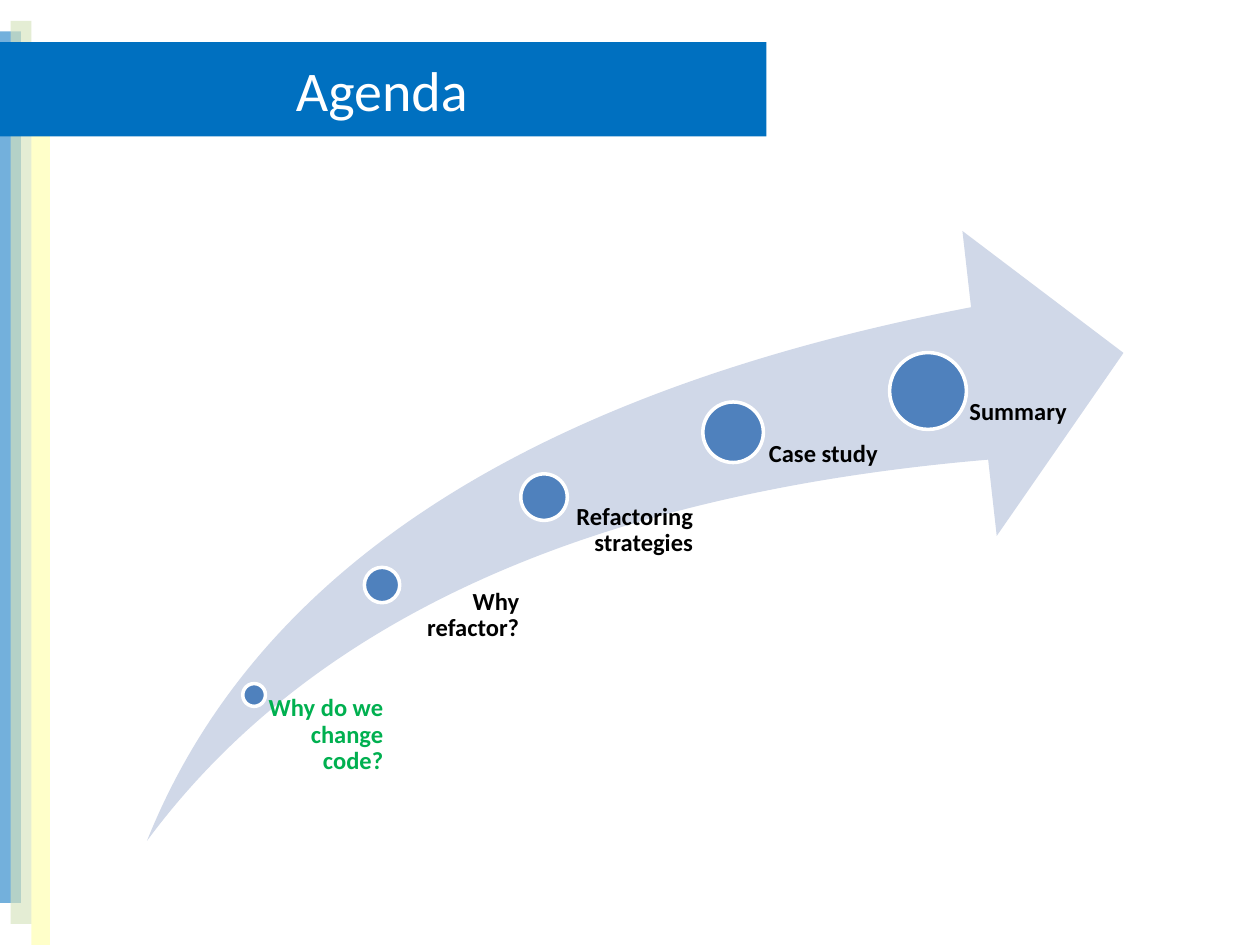
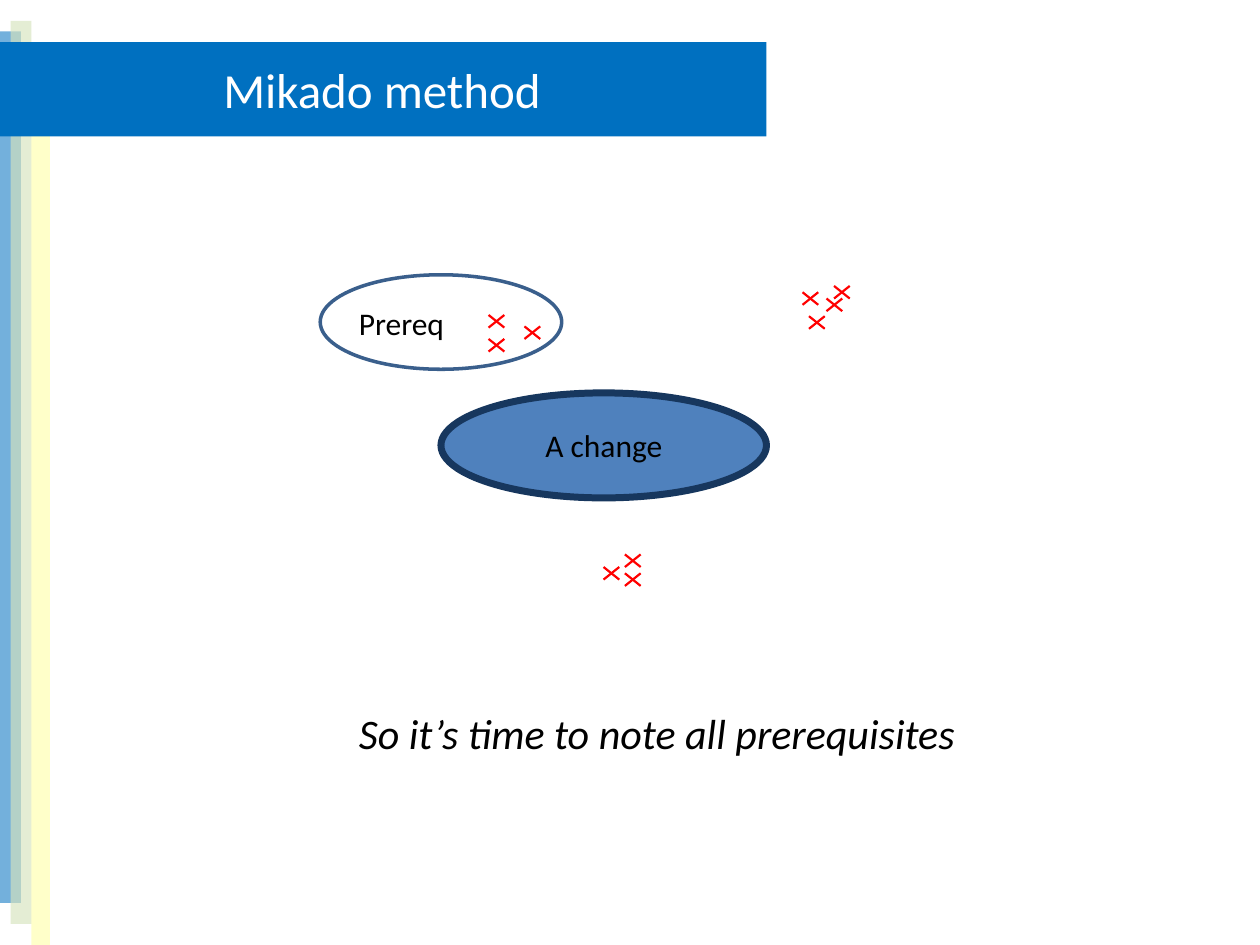
from dataclasses import dataclass

from lxml.etree import SubElement
from pptx import Presentation
from pptx.dml.color import RGBColor as Rgb
from pptx.enum.shapes import MSO_CONNECTOR as Connector, MSO_SHAPE as Shape
from pptx.enum.text import MSO_ANCHOR as Anchor, MSO_AUTO_SIZE as Fit, PP_ALIGN as Align
from pptx.oxml.ns import qn
from pptx.util import Pt


@dataclass(frozen=True)
class Theme:
    font: str = "Calibri"
    white: str = "FFFFFF"
    black: str = "000000"
    banner: str = "0070C0"
    sage: str = "D7E4BD"
    yellow: str = "FFFF00"
    swoosh: str = "D0D8E8"
    accent: str = "4F81BD"
    outline: str = "3A5F8C"
    navy: str = "17375E"
    current: str = "00B050"
    cross: str = "FF0000"
    title_size: float = 32
    small_title_size: float = 28
    remark_size: float = 24
    node_size: float = 18
    label_size: float = 14


THEME = Theme()

# left, top, width, height, colour, opacity in percent
BANDS = [
    (0, 18, 12, 498, THEME.banner, 55),
    (6, 12, 12, 516, THEME.sage, 65),
    (18, 24, 10.5, 516, THEME.yellow, 21),
]
BANNER = (-1.5, 24, 439.5, 54)

# dot centre x, centre y, diameter; label box; label; colour
MILESTONES = [
    (145.2, 397.1, 13, (145.5, 397.5, 73.5, 83), "Why do we change code?", THEME.current),
    (218.3, 334.3, 20.2, (204, 336.5, 92.7, 146), "Why\vrefactor?", THEME.black),
    (310.9, 284.1, 26.6, (288, 288, 108, 196), "Refactoring strategies", THEME.black),
    (418.9, 247, 34.6, (390, 252, 111.6, 234), "Case study", THEME.black),
    (530.3, 223.4, 43.9, (498, 228, 111.6, 256), "Summary", THEME.black),
]
LABEL_INSET_PER_DIAMETER = 0.53

CROSS_WIDTH, CROSS_HEIGHT = 9, 7.2
CROSSES = [
    (279.2, 180), (299.7, 186.5), (279.2, 193.7),
    (458.6, 167), (476.6, 163.4), (472.3, 170.6), (462.3, 180.7),
    (344.9, 324), (357.1, 327.6), (357.1, 316.8),
]


def points(*lengths):
    return [Pt(length) for length in lengths]


def apply_format(target, values):
    for name, value in values.items():
        setattr(target, name, value)


def write(shape, text, size, color, align=Align.LEFT, frame_format=None, **font_format):
    frame = shape.text_frame
    apply_format(frame, {"word_wrap": True, **(frame_format or {})})
    frame.text = text
    para = frame.paragraphs[0]
    para.alignment = align
    for span in para.runs:
        apply_format(span.font, {"name": THEME.font, "size": Pt(size), **font_format})
        span.font.color.rgb = Rgb.from_string(color)
    return para


def add_filled(page, kind, bounds, fill, line=None, line_width=2):
    shape = page.shapes.add_shape(kind, *points(*bounds))
    shape.shadow.inherit = False
    shape.fill.solid()
    shape.fill.fore_color.rgb = Rgb.from_string(fill)
    if line:
        shape.line.color.rgb = Rgb.from_string(line)
        shape.line.width = Pt(line_width)
    else:
        shape.line.fill.background()
    return shape


def add_text(page, bounds, text, size, color=THEME.black, **options):
    box = page.shapes.add_textbox(*points(*bounds))
    return write(box, text, size, color, **options)


def move_bands_to_layout(page):
    """Draw the side bands on the page, then move them behind its layout."""
    tree = page.slide_layout.shapes.element
    for index, (*bounds, color, opacity) in enumerate(BANDS):
        band = add_filled(page, Shape.RECTANGLE, bounds, color).element
        fill_color = band.spPr.find(f"{qn('a:solidFill')}/{qn('a:srgbClr')}")
        SubElement(fill_color, qn("a:alpha"), val=str(opacity * 1000))
        band.nvSpPr.cNvPr.set("id", str(100 + index))
        tree.insert(2 + index, band)


def add_page(deck, layout, title, size):
    page = deck.slides.add_slide(layout)
    banner = page.shapes.title
    names = ("left", "top", "width", "height")
    apply_format(banner, dict(zip(names, points(*BANNER))))
    banner.fill.solid()
    banner.fill.fore_color.rgb = Rgb.from_string(THEME.banner)
    write(banner, title, size, THEME.white, align=Align.CENTER,
          frame_format={"vertical_anchor": Anchor.MIDDLE, "auto_size": Fit.NONE})
    return page


def add_milestone(page, x, y, diameter, bounds, label, color):
    corner = (x - diameter / 2, y - diameter / 2)
    add_filled(page, Shape.OVAL, (*corner, diameter, diameter), THEME.accent, THEME.white)
    insets = {
        "margin_left": Pt(diameter * LABEL_INSET_PER_DIAMETER),
        "margin_top": 0, "margin_right": 0, "margin_bottom": 0,
    }
    para = add_text(page, bounds, label, THEME.label_size, color,
                    align=Align.RIGHT, frame_format=insets, bold=True)
    para.line_spacing = 0.9


def add_cross(page, left, top):
    group = page.shapes.add_group_shape()
    right, bottom = left + CROSS_WIDTH, top + CROSS_HEIGHT
    for ends in ((left, top, right, bottom), (right, top, left, bottom)):
        stroke = group.shapes.add_connector(Connector.STRAIGHT, *points(*ends))
        stroke.line.color.rgb = Rgb.from_string(THEME.cross)
        stroke.line.width = Pt(1.25)
        SubElement(stroke.element.spPr, qn("a:effectLst"))


def build_agenda(page):
    arrow = add_filled(page, Shape.SWOOSH_ARROW, (84, 132, 558, 348.5), THEME.swoosh)
    for index in range(2):
        arrow.adjustments[index] = 0.25
    for milestone in MILESTONES:
        add_milestone(page, *milestone)


def build_mikado(page):
    grow = {"auto_size": Fit.SHAPE_TO_FIT_TEXT}
    add_filled(page, Shape.OVAL, (183, 157, 138, 54), THEME.white, THEME.outline)
    add_text(page, (198, 170, 108, 29), "Prereq", THEME.node_size, frame_format=grow)
    add_filled(page, Shape.OVAL, (252, 224.5, 186, 60), THEME.accent, THEME.navy, 4)
    add_text(page, (279, 240, 132, 29), "A change", THEME.node_size,
             align=Align.CENTER, frame_format=grow)
    add_text(page, (198, 400.5, 426, 36), "So it’s time to note all prerequisites",
             THEME.remark_size, frame_format=grow, italic=True)
    for corner in CROSSES:
        add_cross(page, *corner)


def main():
    deck = Presentation()
    deck.slide_width, deck.slide_height = points(720, 540)
    title_only = deck.slide_layouts[5]
    agenda = add_page(deck, title_only, "Agenda", THEME.title_size)
    move_bands_to_layout(agenda)
    build_agenda(agenda)
    mikado = add_page(deck, title_only, "Mikado method", THEME.small_title_size)
    build_mikado(mikado)
    deck.save("out.pptx")


if __name__ == "__main__":
    main()
